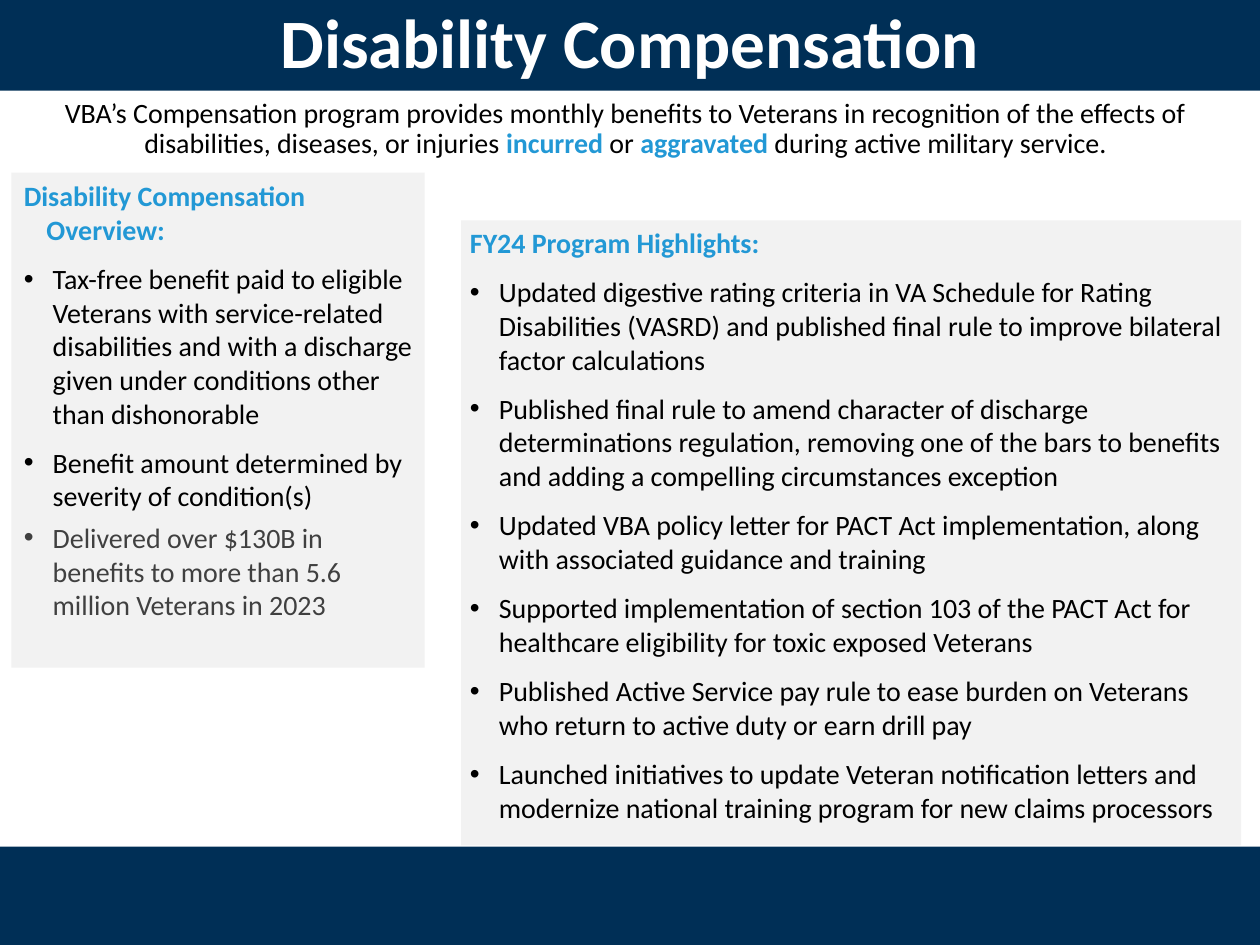
from dataclasses import dataclass

import pptx
import pptx.dml.color
import pptx.enum.shapes
import pptx.enum.text
import pptx.oxml.ns
import pptx.util
from lxml import etree
from pptx.util import Inches, Pt

NAVY = "002F56"
SKY = "2298D5"
PALE = "F2F2F2"
WHITE = "FFFFFF"
BLACK = "000000"
GREY = "404040"
FONT = "Calibri"
BODY_SIZE = 16
GAP = 4.5
ALIGN = pptx.enum.text.PP_ALIGN
ANCHOR = pptx.enum.text.MSO_ANCHOR


@dataclass
class Area:
    left: float
    top: float
    width: float
    height: float

    def lengths(self) -> list:
        return [Inches(n) for n in (self.left, self.top, self.width, self.height)]


@dataclass
class Span:
    text: str
    color: str = BLACK
    bold: bool = False
    size: float = BODY_SIZE


@dataclass
class Item:
    text: str
    color: str = BLACK
    gap: float = GAP


@dataclass
class Panel:
    area: Area
    inset_x: float
    inset_y: float
    heading: str
    heading_indent: float
    items: list[Item]


def rgb(color: str):
    return pptx.dml.color.RGBColor.from_string(color)


def add_rectangle(slide, area: Area, color: str):
    box = slide.shapes.add_shape(
        pptx.enum.shapes.MSO_SHAPE.RECTANGLE, *area.lengths())
    box.shadow.inherit = False
    box.fill.solid()
    box.fill.fore_color.rgb = rgb(color)
    box.line.fill.background()
    return box


def set_frame(box, insets: tuple, anchor=ANCHOR.TOP):
    """Set wrapping, anchor and insets (left, top, right, bottom)."""
    frame = box.text_frame
    frame.word_wrap = True
    frame.vertical_anchor = anchor
    (frame.margin_left, frame.margin_top,
     frame.margin_right, frame.margin_bottom) = [Inches(n) for n in insets]
    return frame


def add_spans(para, spans: list[Span]) -> None:
    for span in spans:
        run = para.add_run()
        run.text = span.text
        run.font.name = FONT
        run.font.size = Pt(span.size)
        run.font.bold = span.bold
        run.font.color.rgb = rgb(span.color)


def set_hanging(para, indent: float, bullet: str = "") -> None:
    """Give a paragraph a hanging indent and, if named, a bullet."""
    properties = para._p.get_or_add_pPr()
    properties.set("marL", str(Inches(indent)))
    properties.set("indent", str(-Inches(indent)))
    if bullet:
        font = etree.SubElement(properties, pptx.oxml.ns.qn("a:buFont"))
        font.set("typeface", "Arial")
        mark = etree.SubElement(properties, pptx.oxml.ns.qn("a:buChar"))
        mark.set("char", bullet)


def add_panel(slide, panel: Panel) -> None:
    box = add_rectangle(slide, panel.area, PALE)
    frame = set_frame(box, (panel.inset_x, panel.inset_y) * 2)
    para = frame.paragraphs[0]
    para.alignment = ALIGN.LEFT
    para.space_after = Pt(GAP)
    set_hanging(para, panel.heading_indent)
    add_spans(para, [Span(panel.heading, SKY, True)])
    for item in panel.items:
        para = frame.add_paragraph()
        para.alignment = ALIGN.LEFT
        para.space_before = para.space_after = Pt(item.gap)
        set_hanging(para, 0.23, "•")
        add_spans(para, [Span(item.text, item.color)])


HIGHLIGHTS = Panel(
    Area(3.66, 1.75, 6.19, 4.96), 0.07, 0.04,
    "FY24 Program Highlights:", 0.23,
    [
        Item("Updated digestive rating criteria in VA Schedule for Rating "
             "Disabilities (VASRD) and published final rule to improve "
             "bilateral factor calculations"),
        Item("Published final rule to amend character of discharge "
             "determinations regulation, removing one of the bars to benefits "
             "and adding a compelling circumstances exception"),
        Item("Updated VBA policy letter for PACT Act implementation, along "
             "with associated guidance and training"),
        Item("Supported implementation of section 103 of the PACT Act for "
             "healthcare eligibility for toxic exposed Veterans"),
        Item("Published Active Service pay rule to ease burden on Veterans "
             "who return to active duty or earn drill pay"),
        Item("Launched initiatives to update Veteran notification letters and "
             "modernize national training program for new claims processors"),
    ])

OVERVIEW = Panel(
    Area(0.09, 1.37, 3.28, 3.93), 0.1, 0.05,
    "Disability Compensation Overview:", 0.18,
    [
        Item("Tax-free benefit paid to eligible Veterans with service-related "
             "disabilities and with a discharge given under conditions other "
             "than dishonorable"),
        Item("Benefit amount determined by severity of condition(s)"),
        Item("Delivered over $130B in benefits to more than 5.6 million "
             "Veterans in 2023", GREY, 0),
    ])

INTRO = [
    Span("VBA’s Compensation program provides monthly benefits to Veterans in "
         "recognition of the effects of disabilities, diseases, or injuries "),
    Span("incurred", SKY, True),
    Span(" or "),
    Span("aggravated", SKY, True),
    Span(" during active military service."),
]


def main() -> None:
    deck = pptx.Presentation()
    deck.slide_width, deck.slide_height = Inches(10), Inches(7.5)
    page = deck.slides.add_slide(deck.slide_layouts[6])

    add_rectangle(page, Area(0, 6.72, 10, 0.8), NAVY)
    title_bar = add_rectangle(page, Area(0, -0.08, 10, 0.8), NAVY)
    para = set_frame(title_bar, (0.1, 0.05) * 2, ANCHOR.MIDDLE).paragraphs[0]
    para.alignment = ALIGN.CENTER
    add_spans(para, [Span("Disability Compensation", WHITE, True, 39.6)])

    intro_box = page.shapes.add_textbox(*Area(0, 0.79, 10, 0.77).lengths())
    para = set_frame(intro_box, (0, 0, 0.07, 0.04)).paragraphs[0]
    para.alignment = ALIGN.CENTER
    para.line_spacing = 0.9
    add_spans(para, INTRO)

    for panel in (HIGHLIGHTS, OVERVIEW):
        add_panel(page, panel)

    deck.save("out.pptx")


if __name__ == "__main__":
    main()
